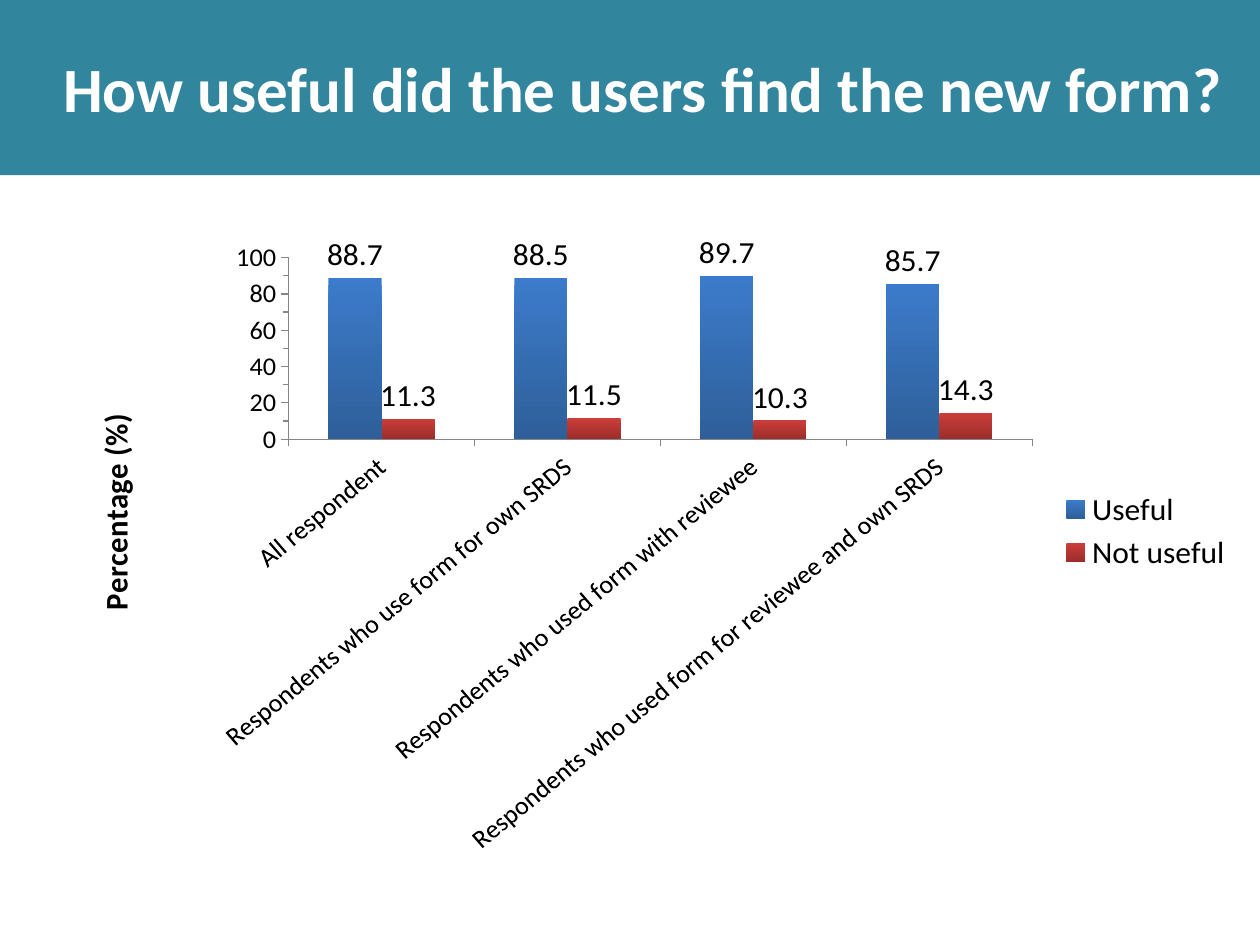
from dataclasses import dataclass

from lxml import etree
from pptx import Presentation
from pptx.chart.axis import CategoryAxis, ValueAxis
from pptx.chart.chart import Chart
from pptx.chart.data import CategoryChartData
from pptx.dml.color import RGBColor
from pptx.enum.chart import XL_CHART_TYPE, XL_LABEL_POSITION, XL_LEGEND_POSITION, XL_TICK_MARK
from pptx.enum.text import MSO_ANCHOR, PP_ALIGN
from pptx.oxml.ns import qn
from pptx.slide import Slide
from pptx.util import Inches, Pt

COLUMNS = XL_CHART_TYPE.COLUMN_CLUSTERED
ABOVE_BAR = XL_LABEL_POSITION.OUTSIDE_END
RIGHT = XL_LEGEND_POSITION.RIGHT
OUTSIDE = XL_TICK_MARK.OUTSIDE
MIDDLE = MSO_ANCHOR.MIDDLE
LEFT = PP_ALIGN.LEFT
FONT = "Calibri"
AXIS_SIZE = 15
CHART_SIZE = 18
GROUP_ANGLE = -40
GROUPS = (
    "All respondent",
    "Respondents who use form for own SRDS",
    "Respondents who used form with reviewee",
    "Respondents who used form for reviewee and own SRDS",
)


@dataclass(frozen=True)
class Rating:
    """One answer with its share per group and its gradient."""

    name: str
    shares: tuple[float, ...]
    top: str
    bottom: str


RATINGS = (
    Rating("Useful", (88.7, 88.5, 89.7, 85.7), "3C7BCB", "2E5F99"),
    Rating("Not useful", (11.3, 11.5, 10.3, 14.3), "CB3D3A", "9B2D2A"),
)


def color(value: str) -> RGBColor:
    """Turn a hex string into a colour."""
    return RGBColor.from_string(value)


def style_font(font, size: float, shade: str, bold: bool = False) -> None:
    """Set typeface, size, colour and weight."""
    font.name = FONT
    font.size = Pt(size)
    font.bold = bold
    font.color.rgb = color(shade)


def place(element, **fractions: float) -> None:
    """Give a chart part a manual layout in fractions of the chart."""
    layout = element.find(qn("c:layout"))
    if layout is None:
        layout = etree.Element(qn("c:layout"))
        before = [child for child in element
                  if child.tag in (qn("c:tx"), qn("c:legendPos"))]
        element.insert(element.index(before[-1]) + 1 if before else 0, layout)
    for child in list(layout):
        layout.remove(child)
    manual = etree.SubElement(layout, qn("c:manualLayout"))
    if "w" in fractions:
        etree.SubElement(manual, qn("c:layoutTarget")).set("val", "inner")
    for mode in ("xMode", "yMode"):
        etree.SubElement(manual, qn(f"c:{mode}")).set("val", "edge")
    for key, fraction in fractions.items():
        etree.SubElement(manual, qn(f"c:{key}")).set("val", str(fraction))


def add_heading(slide: Slide, question: str) -> None:
    """Turn the title placeholder into the banner."""
    banner = slide.shapes.title
    banner.left, banner.top = Inches(0), Inches(0)
    banner.width, banner.height = Inches(10), Inches(1.39)
    banner.fill.solid()
    banner.fill.fore_color.rgb = color("31859C")
    frame = banner.text_frame
    frame.text = question
    frame.word_wrap = True
    frame.vertical_anchor = MIDDLE
    frame.margin_left = Inches(0.5)
    frame.margin_right = Inches(0.1)
    paragraph = frame.paragraphs[0]
    paragraph.alignment = LEFT
    style_font(paragraph.runs[0].font, 36, "FFFFFF", bold=True)


def style_axis(axis: CategoryAxis | ValueAxis) -> None:
    """Draw a plain grey axis with outer ticks."""
    axis.has_major_gridlines = False
    axis.major_tick_mark = OUTSIDE
    axis.format.line.color.rgb = color("868686")
    style_font(axis.tick_labels.font, AXIS_SIZE, "000000")


def style_ratings(chart: Chart) -> None:
    """Fill the columns and label them with their values."""
    plot = chart.plots[0]
    plot.gap_width = 150
    plot.overlap = 0
    plot.vary_by_categories = False
    for series, rating in zip(plot.series, RATINGS):
        fill = series.format.fill
        fill.gradient()
        fill.gradient_angle = 270
        for stop, shade in zip(fill.gradient_stops, (rating.top, rating.bottom)):
            stop.color.rgb = color(shade)
        labels = series.data_labels
        labels.show_value = True
        labels.position = ABOVE_BAR
        style_font(labels.font, CHART_SIZE, "000000")


def add_ratings_chart(slide: Slide) -> None:
    """Add the column chart of ratings per group."""
    data = CategoryChartData()
    data.categories = GROUPS
    for rating in RATINGS:
        data.add_series(rating.name, rating.shares)
    chart = slide.shapes.add_chart(
        COLUMNS, Inches(0.51), Inches(1.86), Inches(9.37), Inches(5.28), data
    ).chart
    style_font(chart.font, CHART_SIZE, "000000")
    chart.has_title = False
    style_ratings(chart)

    groups, percentage = chart.category_axis, chart.value_axis
    style_axis(groups)
    style_axis(percentage)
    groups.tick_labels.font._element.getparent().getparent().getparent().find(
        qn("a:bodyPr")).set("rot", str(GROUP_ANGLE * 60000))
    percentage.minimum_scale, percentage.maximum_scale = 0, 100
    percentage.major_unit, percentage.minor_unit = 20, 10
    percentage.minor_tick_mark = OUTSIDE
    caption = percentage.axis_title
    caption.text_frame.text = "Percentage (%)"
    style_font(caption.text_frame.paragraphs[0].runs[0].font, CHART_SIZE, "000000", bold=True)

    chart.has_legend = True
    chart.legend.position = RIGHT
    chart.legend.include_in_layout = False
    style_font(chart.legend.font, CHART_SIZE, "000000")
    plot_area = chart.element.find(".//" + qn("c:plotArea"))
    place(plot_area, x=0.19, y=0.01, w=0.63, h=0.28)
    place(plot_area.find(".//" + qn("c:title")), x=0.02, y=0.25)
    place(chart.element.find(".//" + qn("c:legend")), x=0.84, y=0.36)


def main() -> None:
    """Build and save the slide."""
    deck = Presentation()
    deck.slide_width, deck.slide_height = Inches(10), Inches(7.5)
    slide = deck.slides.add_slide(deck.slide_layouts[5])
    add_heading(slide, "How useful did the users find the new form?")
    add_ratings_chart(slide)
    deck.save("out.pptx")


if __name__ == "__main__":
    main()
